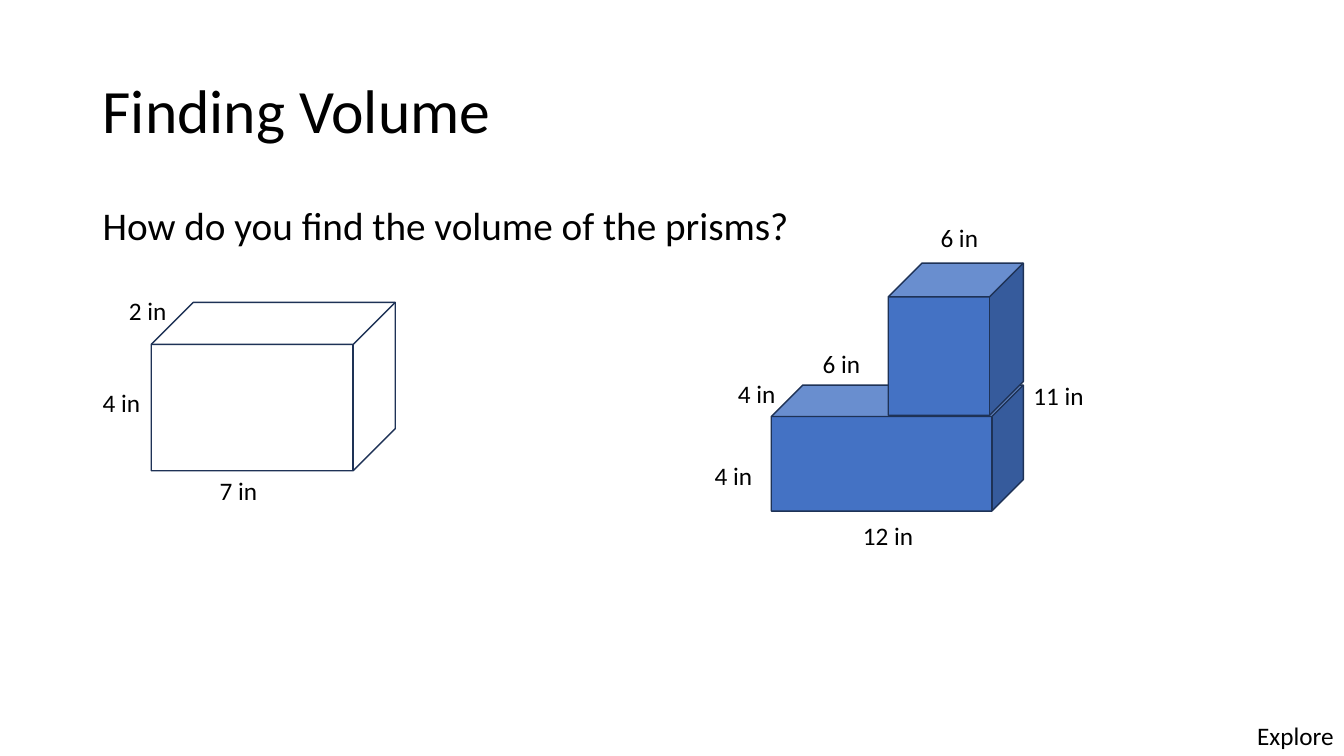
from dataclasses import dataclass

from pptx import Presentation
from pptx import util as u
from pptx.dml.color import RGBColor
from pptx.enum import shapes, text


@dataclass(frozen=True)
class Theme:
    font: str = "Calibri"
    ink: str = "000000"
    edge: str = "1E3256"
    solid: str = "4472C4"
    title: int = 44
    body: int = 28
    label: int = 18


def write(tf, content, theme, size, spacing=None):
    p = tf.paragraphs[0]
    if spacing:
        p.line_spacing = spacing
    r = p.add_run()
    r.text = content
    r.font.name = theme.font
    r.font.size = u.Pt(size)
    r.font.color.rgb = RGBColor.from_string(theme.ink)


class Deck:
    def __init__(self, theme):
        self.theme = theme
        self.prs = Presentation()
        self.prs.slide_width = u.Inches(13.33)
        self.prs.slide_height = u.Inches(7.5)
        self.s = self.prs.slides.add_slide(self.prs.slide_layouts[6])

    def group(self):
        return self.s.shapes.add_group_shape().shapes

    def box(self, parent, x, y, w, h):
        return parent.add_textbox(*map(u.Inches, (x, y, w, h))).text_frame

    def block(self, content, y, h, size, anchor=text.MSO_ANCHOR.TOP):
        tf = self.box(self.s.shapes, 0.92, y, 11.5, h)
        tf.word_wrap = True
        tf.vertical_anchor = anchor
        write(tf, content, self.theme, size, spacing=0.9)

    def label(self, parent, content, x, y, w=0.58):
        tf = self.box(parent, x, y, w, 0.4)
        tf.word_wrap = False
        tf.auto_size = text.MSO_AUTO_SIZE.SHAPE_TO_FIT_TEXT
        write(tf, content, self.theme, self.theme.label)

    def cube(self, parent, x, y, w, h, fill=None):
        sp = parent.add_shape(shapes.MSO_SHAPE.CUBE, *map(u.Inches, (x, y, w, h)))
        sp.shadow.inherit = False
        if fill:
            sp.fill.solid()
            sp.fill.fore_color.rgb = RGBColor.from_string(fill)
        else:
            sp.fill.background()
        sp.line.color.rgb = RGBColor.from_string(self.theme.edge)
        sp.line.width = u.Pt(1)


def main():
    theme = Theme()
    deck = Deck(theme)

    # Heading, question and corner tag
    deck.block("Finding Volume", 0.4, 1.45, theme.title, text.MSO_ANCHOR.MIDDLE)
    deck.block("How do you find the volume of the prisms?", 2, 4.76, theme.body)
    deck.label(deck.s.shapes, "Explore", 12.37, 7.1, 0.97)

    # Single prism
    prism = deck.group()
    deck.cube(prism, 1.5, 3, 2.42, 1.67)
    for content, x, y in (("4 in", 0.92, 3.79), ("2 in", 1.18, 2.88),
                          ("7 in", 2.08, 4.67)):
        deck.label(prism, content, x, y)

    # Composite prism: base first, tower in front
    stack = deck.group()
    deck.cube(stack, 7.65, 3.82, 2.5, 1.25, theme.solid)
    deck.cube(stack, 8.81, 2.61, 1.34, 1.51, theme.solid)
    for content, x, y in (("4 in", 6.99, 4.52), ("6 in", 8.06, 3.41),
                          ("6 in", 9.23, 2.16), ("4 in", 7.22, 3.7)):
        deck.label(stack, content, x, y)
    for content, x, y in (("11 in", 10.15, 3.72), ("12 in", 8.46, 5.11)):
        deck.label(stack, content, x, y, 0.71)

    deck.prs.save("out.pptx")


if __name__ == "__main__":
    main()
